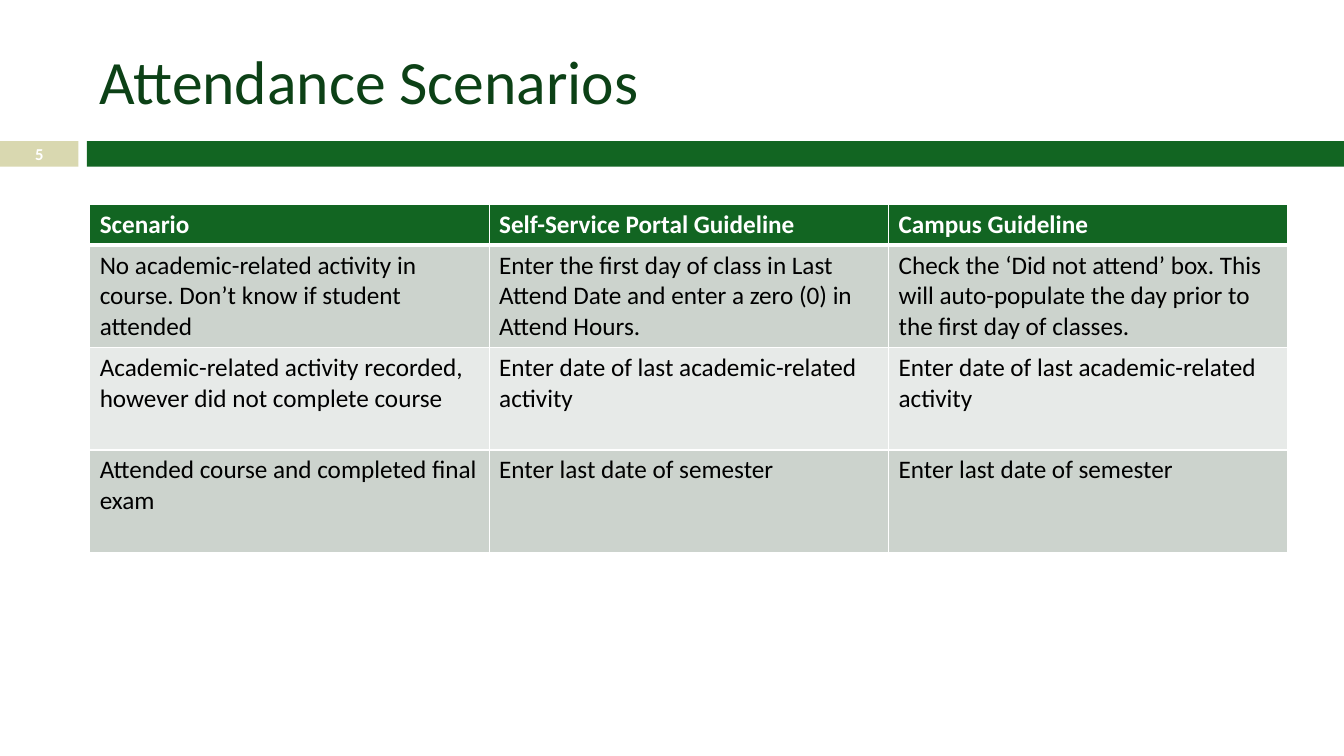
from lxml.etree import SubElement
from pptx import Presentation
from pptx.dml.color import RGBColor
from pptx.enum.shapes import MSO_SHAPE
from pptx.enum.text import MSO_ANCHOR, PP_ALIGN
from pptx.oxml.ns import qn
from pptx.util import Cm, Pt

COLORS = {
    "green": "126522",
    "title": "0C4116",
    "sand": "D9D8B0",
    "white": "FFFFFF",
    "black": "000000",
    "odd_row": "CCD3CD",
    "even_row": "E7EAE8",
}
FONT = "Calibri"
SLIDE_WIDTH, SLIDE_HEIGHT = 33.87, 19.05
HEADER_HEIGHT = 1
SCENARIOS = [
    ("Scenario", "Self-Service Portal Guideline", "Campus Guideline"),
    (
        "No academic-related activity in course. Don’t know if student attended",
        "Enter the first day of class in Last Attend Date and enter a zero (0) in Attend Hours.",
        "Check the ‘Did not attend’ box. This will auto-populate the day prior to the first day of classes.",
    ),
    (
        "Academic-related activity recorded, however did not complete course",
        "Enter date of last academic-related activity",
        "Enter date of last academic-related activity",
    ),
    (
        "Attended course and completed final exam",
        "Enter last date of semester",
        "Enter last date of semester",
    ),
]


def color(name):
    """Return the named palette color."""
    return RGBColor.from_string(COLORS[name])


def write(frame, text, size, ink, bold=False, align=PP_ALIGN.LEFT):
    """Add one styled run to the first paragraph of a text frame."""
    frame.word_wrap = True
    paragraph = frame.paragraphs[0]
    paragraph.alignment = align
    run = paragraph.add_run()
    run.text = text
    run.font.name = FONT
    run.font.size = Pt(size)
    run.font.bold = bold
    run.font.color.rgb = color(ink)


def add_block(slide, left, top, width, height, fill):
    """Add a plain filled rectangle and return it."""
    block = slide.shapes.add_shape(
        MSO_SHAPE.RECTANGLE, Cm(left), Cm(top), Cm(width), Cm(height)
    )
    block.shadow.inherit = False
    block.fill.solid()
    block.fill.fore_color.rgb = color(fill)
    block.line.fill.background()
    return block


def add_title(slide, left, top, width, height):
    """Place the slide heading in its box."""
    heading = slide.shapes.add_textbox(Cm(left), Cm(top), Cm(width), Cm(height))
    heading.text_frame.vertical_anchor = MSO_ANCHOR.MIDDLE
    write(heading.text_frame, "Attendance Scenarios", 44, "title")


def add_band(slide, left, top, width, height, number):
    """Draw the page number tab and the green band beside it."""
    tab_width, gap = 1.98, 0.21
    page_tab = add_block(slide, left, top, tab_width, height, "sand")
    frame = page_tab.text_frame
    frame.margin_top = frame.margin_bottom = 0
    frame.vertical_anchor = MSO_ANCHOR.MIDDLE
    write(frame, number, 11.9, "white", True, PP_ALIGN.CENTER)
    band_left = left + tab_width + gap
    add_block(slide, band_left, top, left + width - band_left, height, "green")


def set_borders(cell, top_width, bottom_width):
    """Give a cell white borders, with its own top and bottom widths."""
    properties = cell._tc.get_or_add_tcPr()
    widths = {"a:lnL": 1, "a:lnR": 1, "a:lnT": top_width, "a:lnB": bottom_width}
    for side, points in widths.items():
        border = SubElement(properties, qn(side), w=str(Pt(points)))
        paint = SubElement(border, qn("a:solidFill"))
        SubElement(paint, qn("a:srgbClr"), val=COLORS["white"])


def add_scenarios(slide, left, top, width, height):
    """Fill the box with the table of scenarios and guidelines."""
    row_count, column_count = len(SCENARIOS), len(SCENARIOS[0])
    table = slide.shapes.add_table(
        row_count, column_count, Cm(left), Cm(top), Cm(width), Cm(height)
    ).table
    for column in table.columns:
        column.width = Cm(width / column_count)
    body_height = (height - HEADER_HEIGHT) / (row_count - 1)
    for row, texts in enumerate(SCENARIOS):
        header = row == 0
        table.rows[row].height = Cm(HEADER_HEIGHT if header else body_height)
        fill = "green" if header else "odd_row" if row % 2 else "even_row"
        for column, text in enumerate(texts):
            cell = table.cell(row, column)
            set_borders(cell, 3 if row == 1 else 1, 3 if header else 1)
            cell.fill.solid()
            cell.fill.fore_color.rgb = color(fill)
            write(cell.text_frame, text, 18, "white" if header else "black", header)


def main():
    """Build and save the attendance slide."""
    deck = Presentation()
    deck.slide_width, deck.slide_height = Cm(SLIDE_WIDTH), Cm(SLIDE_HEIGHT)
    slide = deck.slides.add_slide(deck.slide_layouts[6])
    add_band(slide, 0, 3.56, SLIDE_WIDTH, 0.64, "5")
    add_title(slide, 2.26, 0.64, 30.2, 2.74)
    add_scenarios(slide, 2.26, 5.16, 30.2, 8.74)
    deck.save("out.pptx")


if __name__ == "__main__":
    main()
